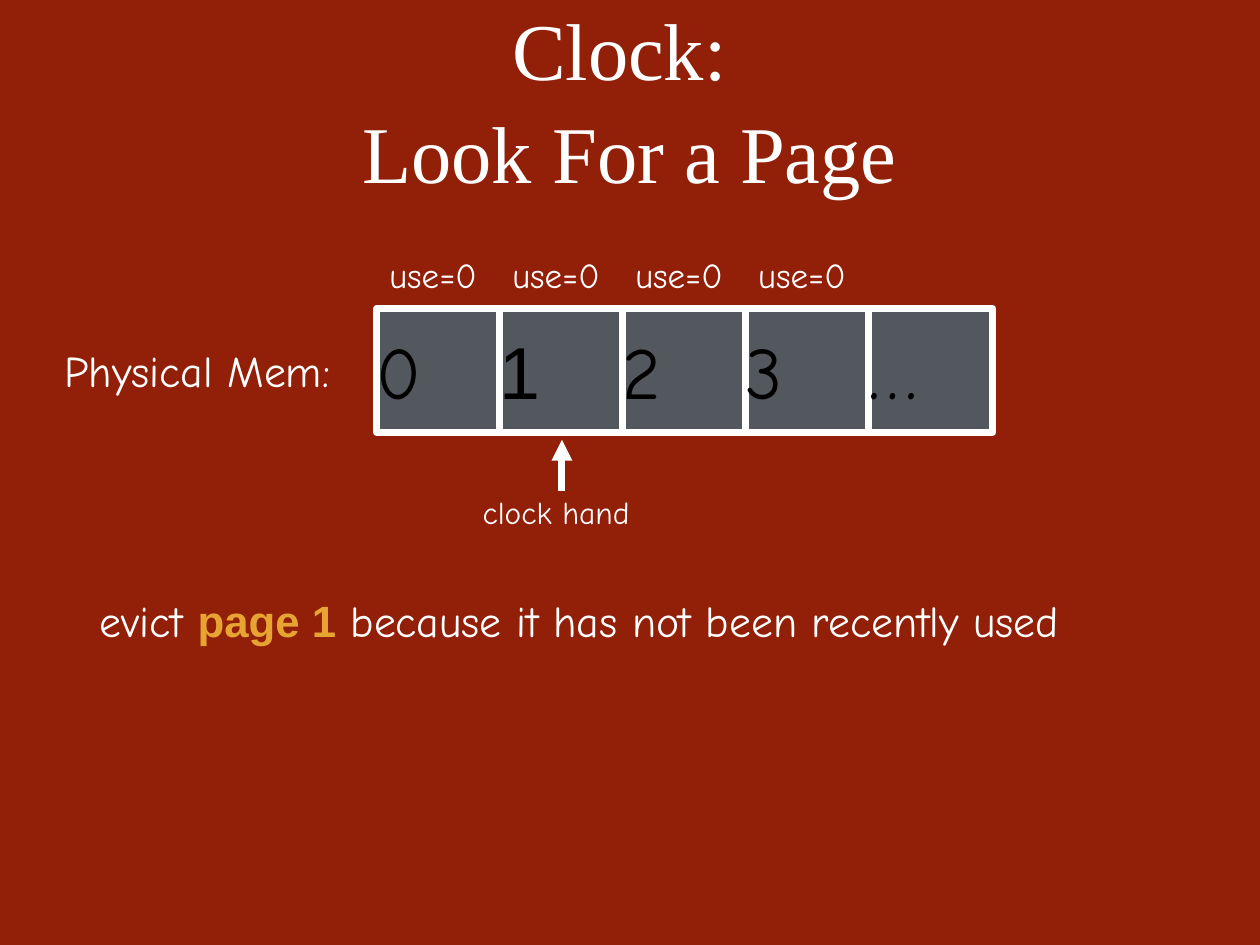
from lxml import etree
from pptx import Presentation
from pptx.dml.color import RGBColor
from pptx.enum.shapes import MSO_CONNECTOR, MSO_SHAPE
from pptx.enum.text import MSO_ANCHOR, MSO_AUTO_SIZE, PP_ALIGN
from pptx.oxml.ns import qn
from pptx.util import Inches, Pt

RECT = MSO_SHAPE.RECTANGLE
STRAIGHT = MSO_CONNECTOR.STRAIGHT
MIDDLE = MSO_ANCHOR.MIDDLE
GROW = MSO_AUTO_SIZE.SHAPE_TO_FIT_TEXT
FIXED = MSO_AUTO_SIZE.NONE
LEFT, CENTER = PP_ALIGN.LEFT, PP_ALIGN.CENTER
HAND, SANS, SERIF = "Comic Neue", "Arial", "Times New Roman"
WHITE, BLACK, GRAY, GOLD, RED = "FFFFFF", "000000", "53585F", "E8A433", "921F07"


def rgb(code):
    """Turn a hex string into a colour."""
    return RGBColor.from_string(code)


def style(font, name, color, size=None):
    """Set the face, colour and, if given, size of a font."""
    font.name = name
    font.color.rgb = rgb(color)
    if size:
        font.size = Pt(size)


def inset(frame, gap):
    """Give a text frame equal margins and centre it vertically."""
    frame.margin_left = frame.margin_right = Inches(gap)
    frame.margin_top = frame.margin_bottom = Inches(gap)
    frame.vertical_anchor = MIDDLE


def label(slide, box, text, size):
    """Add a one-line white label and return its paragraph."""
    frame = slide.shapes.add_textbox(*map(Inches, box)).text_frame
    inset(frame, 0.04)
    frame.word_wrap = False
    frame.auto_size = GROW
    para = frame.paragraphs[0]
    para.text = text
    style(para.font, HAND, WHITE, size)
    return para


def heading(slide, box, text):
    """Fill and place the title."""
    title = slide.shapes.title
    title.left, title.top, title.width, title.height = map(Inches, box)
    frame = title.text_frame
    frame.auto_size = FIXED
    frame.vertical_anchor = MIDDLE
    para = frame.paragraphs[0]
    para.text = text
    para.alignment = CENTER
    para.line_spacing = 1.06
    style(para.font, SERIF, WHITE, 46)


def cell(slide, box, text, face):
    """Add one page frame of the memory."""
    shape = slide.shapes.add_shape(RECT, *map(Inches, box))
    shape.shadow.inherit = False
    shape.fill.solid()
    shape.fill.fore_color.rgb = rgb(GRAY)
    shape.line.color.rgb = rgb(WHITE)
    shape.line.width = Pt(4)
    inset(shape.text_frame, 0)
    para = shape.text_frame.paragraphs[0]
    para.text = text
    para.alignment = LEFT
    style(para.font, face, BLACK, 42)


def memory(slide, box, pages, bits):
    """Draw the row of page frames with the use bits above."""
    left, top, width, height = box
    step = width / len(pages)
    for i, (text, face) in enumerate(pages):
        cell(slide, (left + i * step, top, step + 0.01, height), text, face)
    for i, bit in enumerate(bits):
        label(slide, (left + 0.06 + i * step, top - 0.48, 0.8, 0.42), f"use={bit}", 20)
    label(slide, (left - 2.52, top + 0.24, 2.37, 0.5), "Physical Mem:", 25)


def pointer(slide, box):
    """Draw the clock hand as an upward arrow over its label."""
    left, top, width, height = box
    label(slide, (left, top + 0.38, width, height - 0.38), "clock hand", 18)
    x = Inches(left + 0.67)
    arrow = slide.shapes.add_connector(STRAIGHT, x, Inches(top + 0.41), x, Inches(top))
    arrow.line.color.rgb = rgb(WHITE)
    arrow.line.width = Pt(4)
    tip = etree.SubElement(arrow.line._get_or_add_ln(), qn("a:tailEnd"))
    tip.set("type", "triangle")
    etree.SubElement(arrow._element.spPr, qn("a:effectLst"))


def verdict(slide, box):
    """State which page is evicted."""
    para = label(slide, box, "evict ", 25)
    page = para.add_run()
    page.text = "page 1"
    page.font.bold = True
    style(page.font, SANS, GOLD)
    para.add_run().text = " because it has not been recently used"


def main():
    """Build and save the slide."""
    deck = Presentation()
    deck.slide_width, deck.slide_height = Inches(10), Inches(7.5)
    slide = deck.slides.add_slide(deck.slide_layouts[5])
    slide.background.fill.solid()
    slide.background.fill.fore_color.rgb = rgb(RED)
    heading(slide, (0.85, 0.07, 8.29, 1.4), "Clock: \vLook For a Page")
    pages = [("0", HAND), ("1", SANS), ("2", HAND), ("3", HAND), ("…", HAND)]
    memory(slide, (2.99, 2.45, 4.88, 0.98), pages, [0] * 4)
    pointer(slide, (3.79, 3.49, 1.29, 0.76))
    verdict(slide, (0.75, 4.67, 8.3, 0.5))
    deck.save("out.pptx")


if __name__ == "__main__":
    main()
